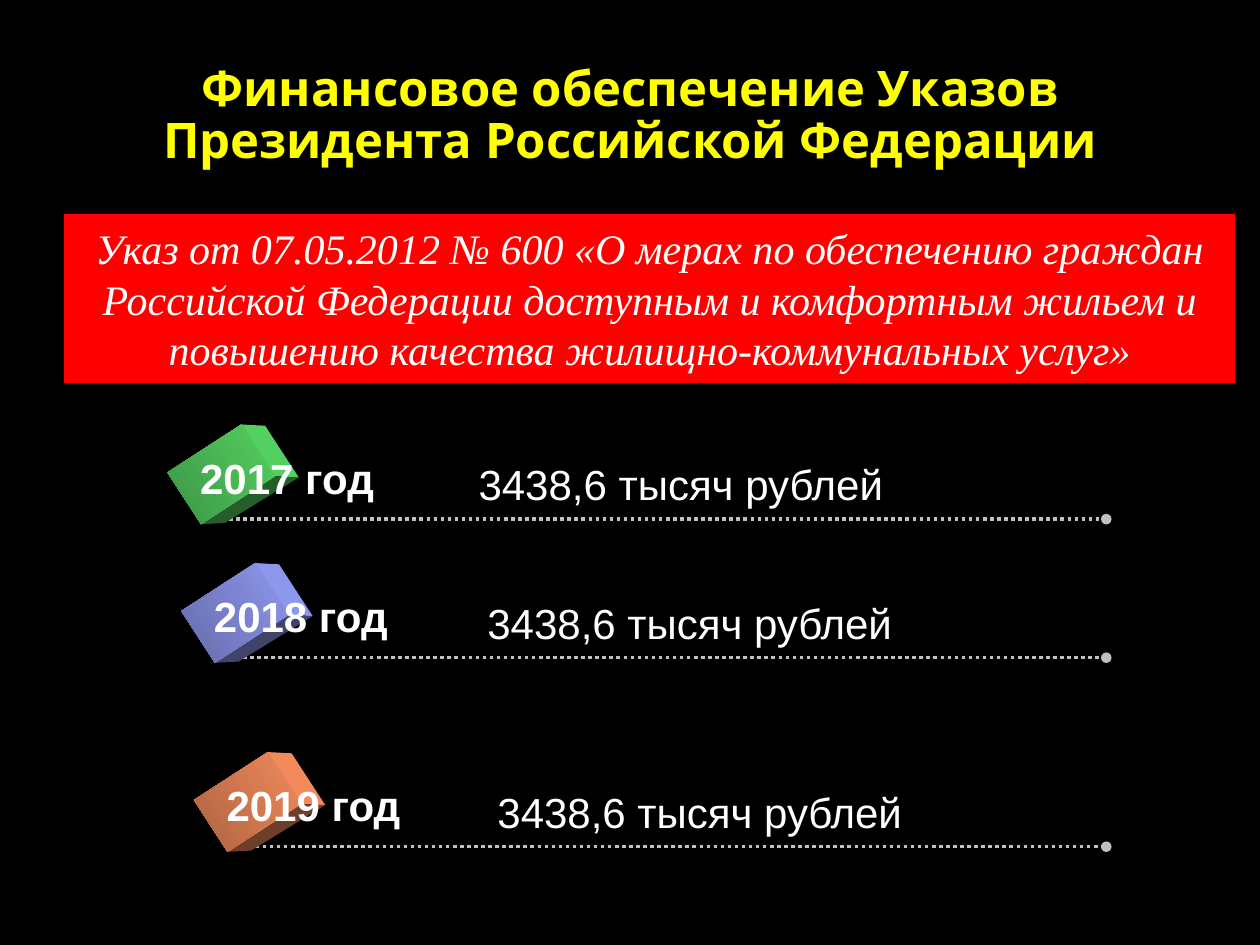
from dataclasses import dataclass
from math import cos, radians, sin

from lxml.etree import SubElement
from pptx import Presentation
from pptx.dml.color import RGBColor
from pptx.enum.dml import MSO_LINE
from pptx.enum.shapes import MSO_CONNECTOR, MSO_SHAPE
from pptx.enum.text import MSO_ANCHOR, MSO_AUTO_SIZE, PP_ALIGN
from pptx.oxml.ns import qn
from pptx.util import Inches, Pt

COLS, ROWS = 100, 75
CUBE_W, CUBE_H, CUBE_TILT = 4.9, 7, 57
LINE_END = 87.8
WHITE, SILVER = "FFFFFF", "C0C0C0"

prs = Presentation()
prs.slide_width, prs.slide_height = Inches(10), Inches(7.5)
s = prs.slides.add_slide(prs.slide_layouts[6])


@dataclass
class YearRow:
    year: str
    amount: str
    left: float
    amount_left: float
    base: float
    label_width: float
    light: str
    dark: str
    shade: str


def col(n: float) -> int:
    return int(prs.slide_width * n / COLS)


def row(n: float) -> int:
    return int(prs.slide_height * n / ROWS)


def rgb(value: str) -> RGBColor:
    return RGBColor.from_string(value)


def write(sp, text: str, *, size: float, font: str, color: str = WHITE,
          bold: bool = False, italic: bool = False, align=PP_ALIGN.LEFT,
          anchor=MSO_ANCHOR.TOP, wrap: bool = True, spacing: float = 1) -> None:
    tf = sp.text_frame
    tf.word_wrap = wrap
    tf.auto_size = MSO_AUTO_SIZE.NONE if wrap else MSO_AUTO_SIZE.SHAPE_TO_FIT_TEXT
    tf.vertical_anchor = anchor
    p = tf.paragraphs[0]
    p.alignment, p.line_spacing = align, spacing
    r = p.add_run()
    r.text = text
    r.font.name, r.font.size = font, Pt(size)
    r.font.bold, r.font.italic = bold, italic
    r.font.color.rgb = rgb(color)


def add_text(x: float, y: float, w: float, h: float, text: str, **fmt) -> None:
    write(s.shapes.add_textbox(col(x), row(y), col(w), row(h)), text, **fmt)


def add_rect(x: float, y: float, w: float, h: float):
    sp = s.shapes.add_shape(MSO_SHAPE.RECTANGLE, col(x), row(y), col(w), row(h))
    sp.shadow.inherit = False
    sp.line.fill.background()
    return sp


def add_face(points: list[tuple[float, float]], color: str) -> None:
    corners = [(col(x), row(y)) for x, y in points]
    builder = s.shapes.build_freeform(*corners[0])
    builder.add_line_segments(corners[1:], close=True)
    sp = builder.convert_to_shape()
    sp.shadow.inherit = False
    sp.fill.solid()
    sp.fill.fore_color.rgb = rgb(color)
    sp.line.fill.background()


def add_cube(cx: float, cy: float, light: str, dark: str, shade: str) -> None:
    c, n = cos(radians(CUBE_TILT)), sin(radians(CUBE_TILT))

    def corner(i: int, j: int) -> tuple[float, float]:
        dx, dy = i * CUBE_W / 2, j * CUBE_H / 2
        return cx + dx * c - dy * n, cy + dx * n + dy * c

    top, right, bottom = corner(-1, -1), corner(1, -1), corner(1, 1)
    back_top, back_right, back_bottom = (
        (x + 1.9, y + dy) for (x, y), dy in ((top, 0.1), (right, 0.1), (bottom, -0.1)))
    add_face([top, back_top, back_right, right], light)
    add_face([bottom, back_bottom, back_right, right], shade)
    sp = add_rect(cx - CUBE_W / 2, cy - CUBE_H / 2, CUBE_W, CUBE_H)
    sp.rotation = CUBE_TILT
    sp.fill.gradient()
    sp.fill.gradient_angle = 270
    for stop, color, position in zip(sp.fill.gradient_stops, (light, dark), (0, 1)):
        stop.color.rgb = rgb(color)
        stop.position = position


def add_dotted_line(x1: float, x2: float, y: float) -> None:
    cn = s.shapes.add_connector(MSO_CONNECTOR.STRAIGHT, col(x1), row(y), col(x2), row(y))
    cn.line.color.rgb = rgb(SILVER)
    cn.line.width = Pt(2)
    cn.line.dash_style = MSO_LINE.ROUND_DOT
    SubElement(cn.line._get_or_add_ln(), qn("a:tailEnd"), type="oval")
    SubElement(cn._element.spPr, qn("a:effectLst"))


def add_year(item: YearRow) -> None:
    add_dotted_line(item.left + 3.3, LINE_END, item.base)
    add_cube(item.left + 2.65, item.base - 3.55, item.light, item.dark, item.shade)
    add_text(item.amount_left, item.base - 5.3, 34.6, 5.1, item.amount,
             size=24, font="Arial", wrap=False)
    add_text(item.left, item.base - 5.8, item.label_width, 5.1, item.year,
             size=24, font="Arial", bold=True, wrap=False)


def main() -> None:
    s.background.fill.solid()
    s.background.fill.fore_color.rgb = rgb("000000")
    add_text(5, 3, 90, 12.5, "Финансовое обеспечение Указов Президента Российской Федерации",
             size=28, font="Open Sans", color="FFFF00", bold=True,
             align=PP_ALIGN.CENTER, anchor=MSO_ANCHOR.MIDDLE, spacing=0.9)
    decree = add_rect(5.1, 17, 92.9, 13.4)
    decree.fill.solid()
    decree.fill.fore_color.rgb = rgb("FF0000")
    write(decree, "Указ от 07.05.2012 № 600 «О мерах по обеспечению граждан "
          "Российской Федерации доступным и комфортным жильем и "
          "повышению качества жилищно-коммунальных услуг»",
          size=24, font="Times New Roman", italic=True,
          align=PP_ALIGN.CENTER, anchor=MSO_ANCHOR.MIDDLE)
    amount = "3438,6 тысяч рублей"
    for item in (
        YearRow("2017 год", amount, 14.9, 37, 41.2, 21.3, "54D060", "3C9545", "265E2B"),
        YearRow("2018 год", amount, 16, 37.7, 52.2, 21, "8E97EE", "666CAA", "40446B"),
        YearRow("2019 год", amount, 17, 38.5, 67.2, 16, "F28A5C", "AD6342", "6D3E29"),
    ):
        add_year(item)
    prs.save("out.pptx")


if __name__ == "__main__":
    main()
